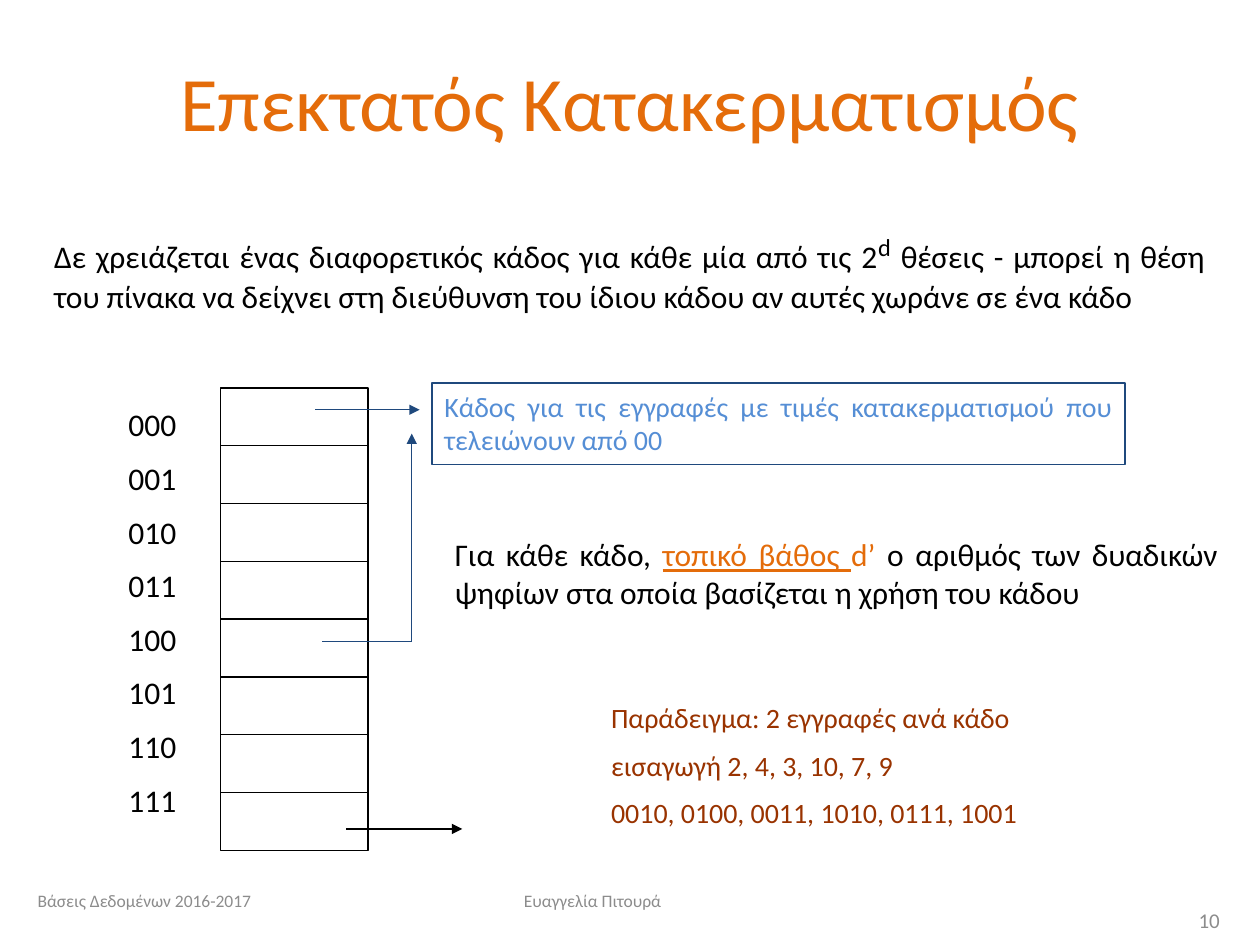
from typing import NamedTuple, Optional

from lxml import etree
from pptx import Presentation
from pptx.dml.color import RGBColor
from pptx.enum import shapes, text
from pptx.oxml import ns
from pptx.util import Cm, Pt

BLACK = RGBColor(0x00, 0x00, 0x00)
WHITE = RGBColor(0xFF, 0xFF, 0xFF)
NAVY = RGBColor(0x1F, 0x49, 0x7D)
BLUE = RGBColor(0x55, 0x8E, 0xD5)
ORANGE = RGBColor(0xE4, 0x6C, 0x0A)
BROWN = RGBColor(0x99, 0x33, 0x00)
GREY = RGBColor(0x8C, 0x8C, 0x8C)

LEFT, CENTER, RIGHT, JUSTIFY = (
    text.PP_ALIGN.LEFT, text.PP_ALIGN.CENTER,
    text.PP_ALIGN.RIGHT, text.PP_ALIGN.JUSTIFY)
TOP, MIDDLE = text.MSO_ANCHOR.TOP, text.MSO_ANCHOR.MIDDLE


class Box(NamedTuple):
    left: float
    top: float
    width: float
    height: float


class Run(NamedTuple):
    words: str
    color: Optional[RGBColor] = None
    size: Optional[int] = None
    underline: bool = False
    superscript: bool = False


class TextBlock(NamedTuple):
    box: Box
    paragraphs: list[list[Run]]
    size: int
    color: RGBColor = BLACK
    align: text.PP_ALIGN = LEFT
    anchor: text.MSO_ANCHOR = TOP
    border: Optional[RGBColor] = None


class Line(NamedTuple):
    x1: float
    y1: float
    x2: float
    y2: float
    color: RGBColor = BLACK
    arrow: bool = False


DIRECTORY = Box(4.45, 7.82, 2.97, 9.32)
DEPTH = 3
SLOTS = 2 ** DEPTH
ROW = DIRECTORY.height / SLOTS

BLOCKS = [
    TextBlock(Box(2.34, 8.05, 2.1, 9.04),
              [[Run(f"{i:0{DEPTH}b}")] for i in range(SLOTS)], 18),
    TextBlock(Box(8.71, 7.72, 13.97, 1.65),
              [[Run("Κάδος για τις εγγραφές με τιμές κατακερματισμού "
                    "που τελειώνουν από 00")]],
              16, BLUE, JUSTIFY, border=NAVY),
    TextBlock(Box(0.84, 4.45, 23.7, 2.79),
              [[Run("Δε χρειάζεται ένας διαφορετικός κάδος για κάθε μία "
                    "από τις 2"),
                Run("d", size=24, superscript=True),
                Run(" θέσεις - μπορεί η θέση του πίνακα να δείχνει στη "
                    "διεύθυνση του ίδιου κάδου αν αυτές χωράνε σε ένα κάδο ")]],
              18, align=JUSTIFY),
    TextBlock(Box(8.92, 10.67, 15.88, 1.8),
              [[Run("Για κάθε κάδο, "),
                Run("τοπικό βάθος ", ORANGE, underline=True),
                Run("d’ ", ORANGE),
                Run("o αριθμός των δυαδικών ψηφίων στα οποία βασίζεται "
                    "η χρήση του κάδου")]],
              18, align=JUSTIFY),
    TextBlock(Box(12.07, 14, 12.4, 3),
              [[Run("Παράδειγμα: 2 εγγραφές ανά κάδο")],
               [Run("εισαγωγή 2, 4, 3, 10, 7, 9")],
               [Run("0010, 0100, 0011, 1010, 0111, 1001")]],
              16, BROWN),
    TextBlock(Box(0.51, 17.65, 5.92, 1.02),
              [[Run("Βάσεις Δεδομένων 2016-2017")]], 10, GREY, anchor=MIDDLE),
    TextBlock(Box(7.92, 17.65, 8.05, 1.02),
              [[Run("Ευαγγελία Πιτουρά")]], 10, GREY, CENTER, MIDDLE),
    TextBlock(Box(18.92, 18.03, 5.92, 1.02),
              [[Run("10")]], 12, GREY, RIGHT, MIDDLE),
]

POINTERS = [
    Line(6.35, 8.26, 8.46, 8.26, NAVY, True),
    Line(6.5, 12.93, 8.3, 12.93, NAVY),
    Line(8.3, 12.93, 8.3, 8.74, NAVY, True),
    Line(6.98, 16.71, 9.32, 16.71, BLACK, True),
]


def place(sp, box: Box) -> None:
    sp.left, sp.top, sp.width, sp.height = map(Cm, box)


def add_text(s, block: TextBlock) -> None:
    sp = s.shapes.add_textbox(*map(Cm, block.box))
    if block.border is not None:
        sp.line.color.rgb = block.border
        sp.line.width = Pt(0.75)
    tf = sp.text_frame
    tf.word_wrap = True
    tf.vertical_anchor = block.anchor
    for i, runs in enumerate(block.paragraphs):
        p = tf.add_paragraph() if i else tf.paragraphs[0]
        p.alignment = block.align
        if i:
            p.space_before = Pt(block.size / 2)
        for run in runs:
            r = p.add_run()
            r.text = run.words
            r.font.name = "Calibri"
            r.font.size = Pt(run.size or block.size)
            r.font.color.rgb = block.color if run.color is None else run.color
            if run.underline:
                r.font.underline = True
            if run.superscript:
                r._r.get_or_add_rPr().set("baseline", "30000")


def add_line(s, line: Line) -> None:
    c = s.shapes.add_connector(
        shapes.MSO_CONNECTOR.STRAIGHT,
        Cm(line.x1), Cm(line.y1), Cm(line.x2), Cm(line.y2))
    c.line.color.rgb = line.color
    c.line.width = Pt(0.75)
    if line.arrow:
        etree.SubElement(c.line._get_or_add_ln(), ns.qn("a:tailEnd"),
                         type="triangle")
    etree.SubElement(c._element.spPr, ns.qn("a:effectLst"))


def add_directory(s) -> None:
    sp = s.shapes.add_shape(shapes.MSO_SHAPE.RECTANGLE, *map(Cm, DIRECTORY))
    sp.shadow.inherit = False
    sp.fill.solid()
    sp.fill.fore_color.rgb = WHITE
    sp.line.color.rgb = BLACK
    sp.line.width = Pt(0.75)
    for i in range(1, SLOTS):
        y = DIRECTORY.top + i * ROW
        add_line(s, Line(DIRECTORY.left, y,
                         DIRECTORY.left + DIRECTORY.width, y))


def set_title(s, words: str) -> None:
    sp = s.shapes.title
    place(sp, Box(1.27, 0.43, 22.86, 3.18))
    tf = sp.text_frame
    tf.text = words
    tf.vertical_anchor = MIDDLE
    p = tf.paragraphs[0]
    p.alignment = CENTER
    r = p.runs[0]
    r.font.name = "Calibri"
    r.font.size = Pt(44)
    r.font.color.rgb = ORANGE


def main() -> None:
    prs = Presentation()
    prs.slide_width, prs.slide_height = Cm(25.4), Cm(19.05)
    s = prs.slides.add_slide(prs.slide_layouts[5])
    set_title(s, "Επεκτατός Κατακερματισμός")
    add_directory(s)
    for block in BLOCKS:
        add_text(s, block)
    for line in POINTERS:
        add_line(s, line)
    prs.save("out.pptx")


if __name__ == "__main__":
    main()
